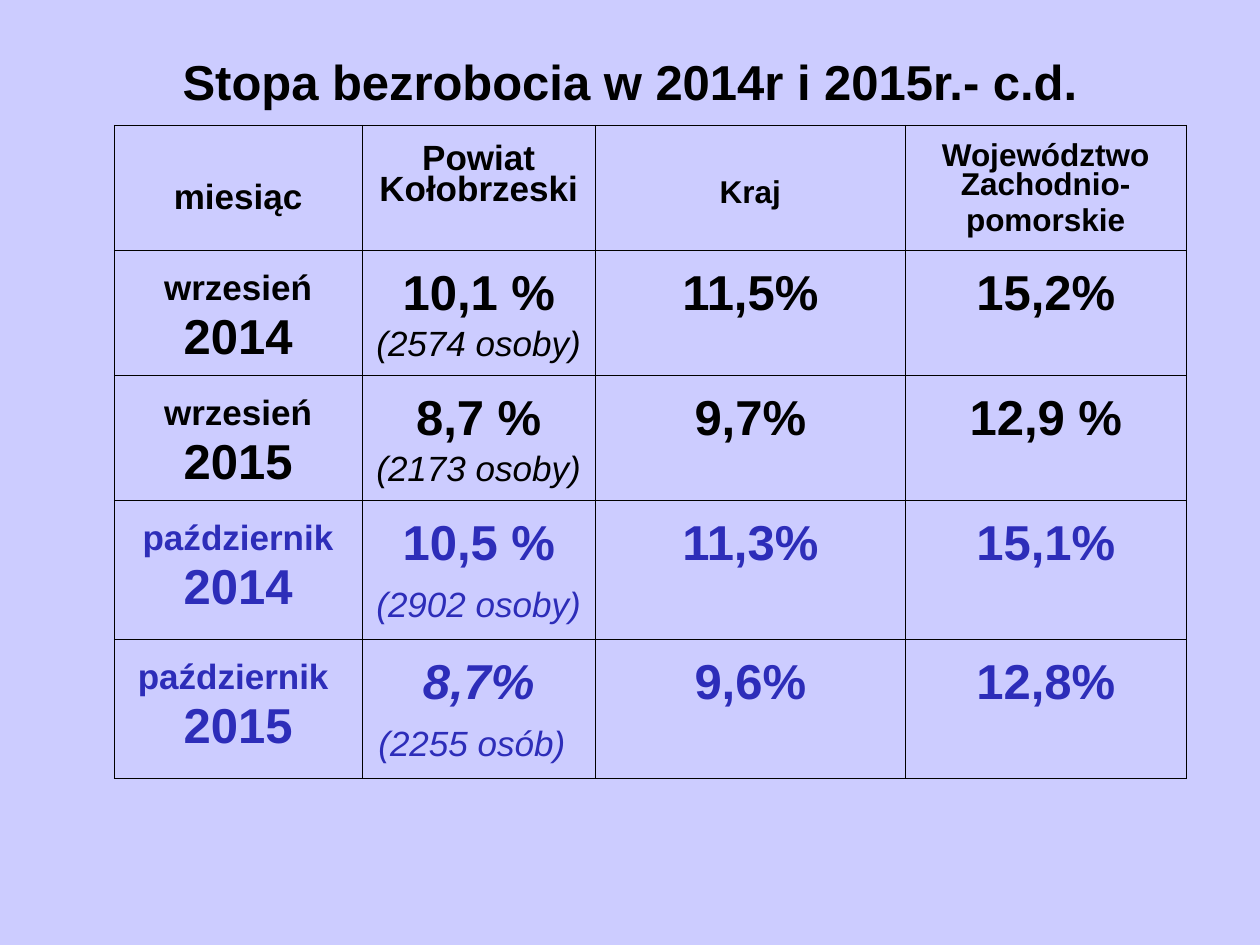
from lxml import etree
from pptx import Presentation
from pptx import util as u
from pptx.dml.color import RGBColor
from pptx.enum import text
from pptx.oxml.ns import qn

BLACK, BLUE, LILAC = "000000", "2D2DB9", "CCCCFF"
COLS = [5, 4.7, 6.25, 5.66]
ROWS = [2.4, 2.42, 2.42, 2.66, 2.68]

# heading paragraphs, size, top inset in cm, space before in points
HEADS = [
    (["miesiąc"], 20, 1.2, 4.5),
    (["Powiat Kołobrzeski"], 20, 0.4, 5),
    (["Kraj"], 18, 1.13, 4.5),
    (["Województwo Zachodnio-", "pomorskie"], 18, 0.38, 4.5),
]

# month, year, county rate, persons, tail of persons, country, region, colour, slanted rate
DATA = [
    ("wrzesień", "2014", "10,1 %", "(2574 osoby)", "", "11,5%", "15,2%", BLACK, False),
    ("wrzesień", "2015", "8,7 %", "(2173 osoby)", "", "9,7%", "12,9 %", BLACK, False),
    ("październik", "2014", "10,5 %", "(2902 osoby)", " ", "11,3%", "15,1%", BLUE, False),
    ("październik ", "2015", "8,7%", "(2255 osób)", " ", "9,6%", "12,8%", BLUE, True),
]


def paint(fill, hue):
    fill.solid()
    fill.fore_color.rgb = RGBColor.from_string(hue)


def write(par, words, size=28, hue=BLACK, bold=True, slant=False):
    """Add a formatted run to a centred paragraph."""
    par.alignment = text.PP_ALIGN.CENTER
    run = par.add_run()
    run.text = words
    font = run.font
    font.name, font.size = "Arial", u.Pt(size)
    font.bold, font.italic = bold, slant
    font.color.rgb = RGBColor.from_string(hue)


def edge(cell, sides):
    """Draw cell borders; sides maps L, R, T, B to points."""
    props = cell._tc.get_or_add_tcPr()
    for at, (side, width) in enumerate(sides.items()):
        line = etree.Element(qn(f"a:ln{side}"), w=str(u.Pt(width)))
        fill = etree.SubElement(line, qn("a:solidFill"))
        etree.SubElement(fill, qn("a:srgbClr"), val=BLACK)
        props.insert(at, line)


def fill_cell(cell, pars, top, gap):
    """Fill a cell with paragraphs, each a list of (words, format) runs."""
    cell.fill.background()
    cell.margin_left = cell.margin_right = u.Cm(0.25)
    cell.margin_top, cell.margin_bottom = u.Cm(top), u.Cm(0.13)
    cell.vertical_anchor = text.MSO_ANCHOR.TOP
    frame = cell.text_frame
    for n, runs in enumerate(pars):
        par = frame.add_paragraph() if n else frame.paragraphs[0]
        par.line_spacing, par.space_before = 0.81, u.Pt(gap)
        for words, form in runs:
            write(par, words, **form)


def add_title(slide, words):
    box = slide.shapes.add_textbox(u.Cm(1.27), u.Cm(0.76), u.Cm(22.86), u.Cm(1.75))
    frame = box.text_frame
    frame.word_wrap = True
    frame.vertical_anchor = text.MSO_ANCHOR.MIDDLE
    write(frame.paragraphs[0], words)


def add_grid(slide):
    shape = slide.shapes.add_table(len(ROWS), len(COLS), u.Cm(2.3), u.Cm(2.52),
                                   u.Cm(sum(COLS)), u.Cm(sum(ROWS)))
    grid = shape.table
    grid.first_row = grid.horz_banding = False
    for col, width in zip(grid.columns, COLS):
        col.width = u.Cm(width)
    for row, height in zip(grid.rows, ROWS):
        row.height = u.Cm(height)
    for r in range(len(ROWS)):
        for c in range(len(COLS)):
            outer = {"L": c == 0, "R": c == len(COLS) - 1,
                     "T": r == 0, "B": r == len(ROWS) - 1}
            edge(grid.cell(r, c), {s: 0.23 if o else 0.11 for s, o in outer.items()})
    return grid


def fill_grid(grid):
    for c, (lines, size, top, gap) in enumerate(HEADS):
        fill_cell(grid.cell(0, c), [[(line, {"size": size})] for line in lines], top, gap)
    for r, (month, year, rate, folk, tail, land, area, hue, slant) in enumerate(DATA, 1):
        big = {"hue": hue}
        small = {"hue": hue, "size": 20}
        count = [(folk, {**small, "bold": False, "slant": True})]
        if tail:
            count.append((tail, big))
        cells = [
            [[(month, small)], [(year, big)]],
            [[(rate, {**big, "slant": slant})], count],
            [[(land, big)]],
            [[(area, big)]],
        ]
        for c, pars in enumerate(cells):
            fill_cell(grid.cell(r, c), pars, 0.5, 7)


def main():
    deck = Presentation()
    deck.slide_width, deck.slide_height = u.Cm(25.4), u.Cm(19.05)
    slide = deck.slides.add_slide(deck.slide_layouts[6])
    paint(slide.background.fill, LILAC)
    add_title(slide, "Stopa bezrobocia w 2014r i 2015r.- c.d.")
    fill_grid(add_grid(slide))
    deck.save("out.pptx")


if __name__ == "__main__":
    main()
